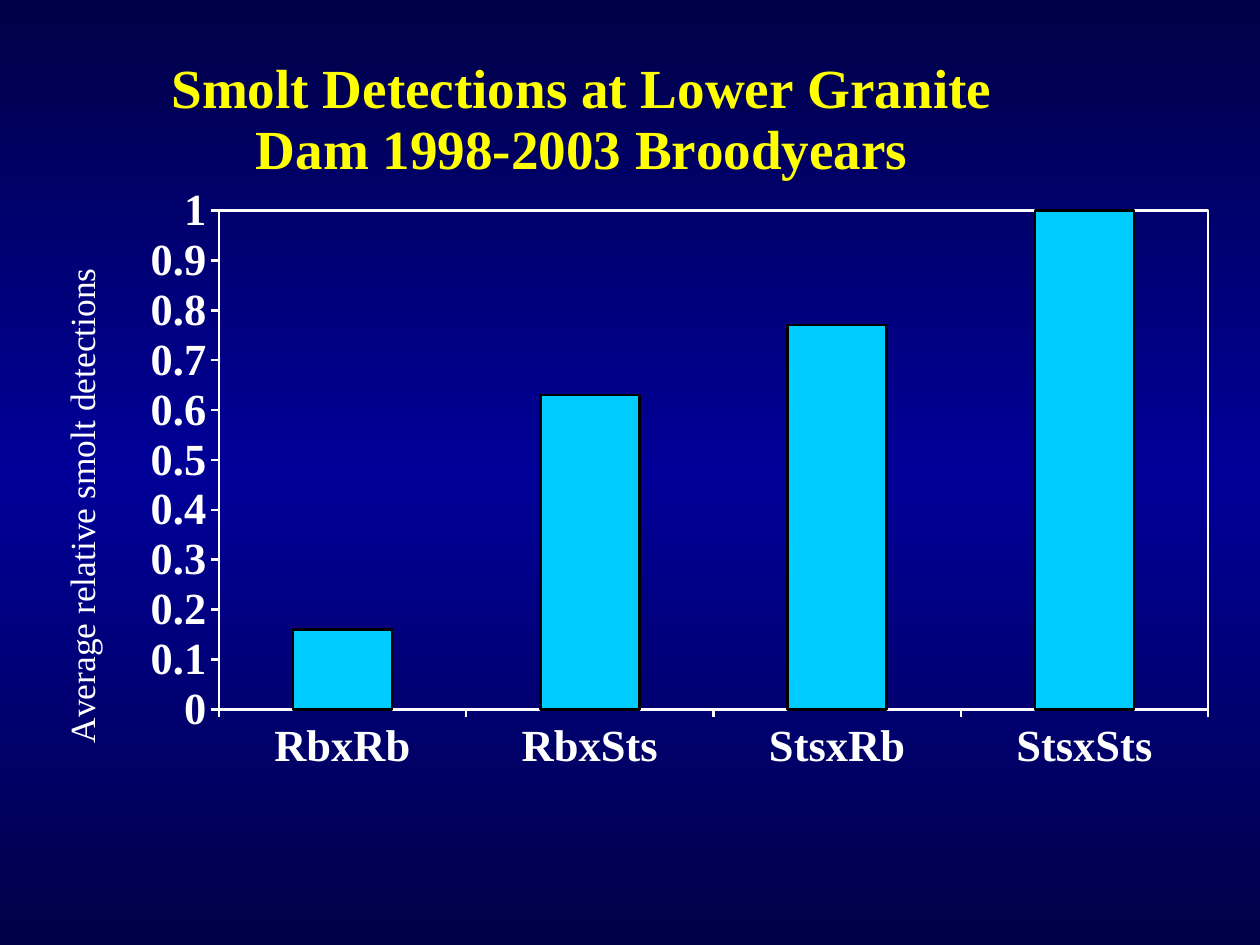
from pptx import Presentation
from pptx.chart.data import CategoryChartData
from pptx.dml.color import RGBColor
from pptx.enum.chart import XL_CHART_TYPE, XL_TICK_MARK
from pptx.oxml import parse_xml
from pptx.oxml.ns import nsdecls
from pptx.util import Pt


def style_font(font, size, color, bold):
    font.name = "Times New Roman"
    font.size = Pt(size)
    font.bold = bold
    font.color.rgb = RGBColor.from_string(color)


def set_layout(element, index, **fractions):
    for layout in element.xpath("./c:layout"):
        element.remove(layout)
    target = '<c:layoutTarget val="inner"/>' if "w" in fractions else ""
    modes = "".join(f'<c:{key}Mode val="edge"/>' for key in "xy")
    values = "".join(f'<c:{key} val="{value}"/>' for key, value in fractions.items())
    element.insert(index, parse_xml(
        f'<c:layout {nsdecls("c")}><c:manualLayout>{target}{modes}{values}'
        '</c:manualLayout></c:layout>'))


prs = Presentation()
prs.slide_width, prs.slide_height = Pt(720), Pt(540)
slide = prs.slides.add_slide(prs.slide_layouts[6])

backdrop = slide.background.fill
backdrop.gradient()
stops = "".join(
    f'<a:gs pos="{position}"><a:srgbClr val="{color}"/></a:gs>'
    for position, color in ((0, "000047"), (50000, "000099"), (100000, "000047")))
gradient = slide.element.xpath(".//p:bgPr/a:gradFill")[0]
gradient.getparent().replace(gradient, parse_xml(
    f'<a:gradFill {nsdecls("a")} rotWithShape="1"><a:gsLst>{stops}</a:gsLst>'
    '<a:lin ang="5400000" scaled="1"/></a:gradFill>'))

detections = CategoryChartData()
detections.categories = ["RbxRb", "RbxSts", "StsxRb", "StsxSts"]
detections.add_series("Series 1", (0.16, 0.63, 0.77, 1))
chart = slide.shapes.add_chart(
    XL_CHART_TYPE.COLUMN_CLUSTERED, Pt(18), Pt(24), Pt(682), Pt(452), detections).chart
style_font(chart.font, 25.9, "000000", True)
chart.has_legend = False

crosses, relative = chart.category_axis, chart.value_axis
for titled, words, size, color, bold in (
        (chart, "Smolt Detections at Lower Granite Dam 1998-2003 Broodyears",
         31.5, "FFFF00", True),
        (relative, "Average relative smolt detections", 20.2, "FFFFFF", False)):
    heading = titled.chart_title if titled is chart else titled.axis_title
    heading.text_frame.text = words
    style_font(heading.text_frame.paragraphs[0].font, size, color, bold)

for axis in (crosses, relative):
    axis.has_major_gridlines = False
    axis.major_tick_mark = XL_TICK_MARK.OUTSIDE
    axis.minor_tick_mark = XL_TICK_MARK.NONE
    style_font(axis.tick_labels.font, 25.4, "FFFFFF", True)
    axis.format.line.color.rgb = RGBColor.from_string("FFFFFF")
    axis.format.line.width = Pt(1.44)
relative.minimum_scale, relative.maximum_scale, relative.major_unit = 0, 1, 0.1
relative.tick_labels.number_format = "General"
relative.tick_labels.number_format_is_linked = False

columns = chart.plots[0]
columns.gap_width = 150
columns.vary_by_categories = False
bars = columns.series[0].format
bars.fill.solid()
bars.fill.fore_color.rgb = RGBColor.from_string("00CCFF")
bars.line.color.rgb = RGBColor.from_string("000000")
bars.line.width = Pt(1.44)

plot_area = chart.element.xpath("c:chart/c:plotArea")[0]
for label_body in plot_area.xpath("*/c:txPr/a:bodyPr"):
    label_body.set("rot", "0")
    label_body.set("vert", "horz")
set_layout(plot_area, 0, x=0.157, y=0.213, w=0.829, h=0.631)
set_layout(chart.element.xpath("c:chart/c:title")[0], 1, x=0.109, y=0.002)
set_layout(plot_area.xpath("c:valAx/c:title")[0], 1, x=0.018, y=0.278)
plot_area.append(parse_xml(
    f'<c:spPr {nsdecls("c", "a")}><a:noFill/><a:ln w="18288"><a:solidFill>'
    '<a:srgbClr val="FFFFFF"/></a:solidFill></a:ln></c:spPr>'))

prs.save("out.pptx")
